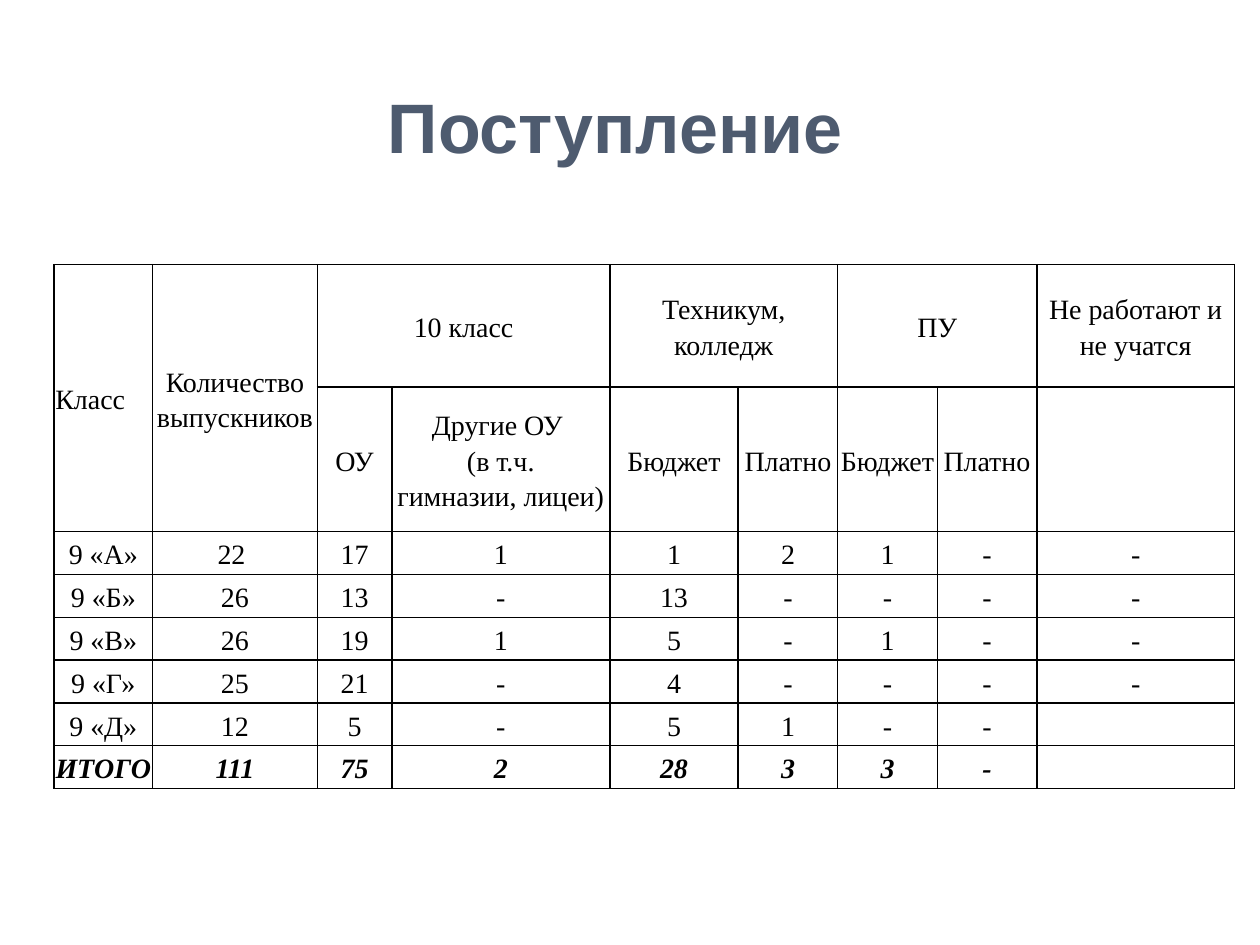
from lxml import etree
from pptx import Presentation
from pptx.dml.color import RGBColor
from pptx.enum.text import MSO_ANCHOR, PP_ALIGN
from pptx.oxml import parse_xml
from pptx.oxml.ns import nsdecls
from pptx.util import Inches, Pt

TITLE = "Поступление "
COLS = [0.78, 1.31, 0.59, 1.73, 1.02, 0.79, 0.79, 0.79, 1.57]
ROWS = [0.97, 1.15] + [0.34] * 6
CELLS = [
    ["Класс", "Количество\nвыпускников", "10 класс", "", "Техникум, колледж", "",
     "ПУ", "", "Не работают и не учатся"],
    ["", "", "ОУ", "Другие ОУ \n(в т.ч.\nгимназии, лицеи)", "Бюджет", "Платно",
     "Бюджет", "Платно", ""],
    ["9 «А»", "22 ", "17", "1", "1", "2", "1", "-", "-"],
    ["9 «Б»", "26", "13", "-", "13", "-", "-", "-", "-"],
    ["9 «В»", "26", "19", "1", "5", "-", "1", "-", "-"],
    ["9 «Г»", "25", "21", "-", "4", "-", "-", "-", "-"],
    ["9 «Д»", "12", "5", "-", "5", "1", "-", "-", ""],
    ["ИТОГО", "111", "75", "2", "28", "3", "3", "-", ""],
]
MERGES = [(0, 0, 1, 0), (0, 1, 1, 1), (0, 2, 0, 3), (0, 4, 0, 5), (0, 6, 0, 7)]


def color(value):
    return RGBColor.from_string(value)


def style_font(p, name, size, value, bold, italic=False):
    f = p.font
    f.name, f.size, f.bold, f.italic = name, Pt(size), bold, italic
    f.color.rgb = color(value)


def add_borders(cell, value="000000", width=1):
    tcPr = cell._tc.get_or_add_tcPr()
    for side in ("lnL", "lnR", "lnT", "lnB"):
        ln = parse_xml(f'<a:{side} {nsdecls("a")} w="{Pt(width)}"/>')
        fill = etree.SubElement(ln, ln.tag.replace(side, "solidFill"))
        etree.SubElement(fill, ln.tag.replace(side, "srgbClr"), val=value)
        tcPr.append(ln)


def fill_cell(cell, text, row, col):
    add_borders(cell)
    cell.fill.solid()
    cell.fill.fore_color.rgb = color("FFFFFF")
    cell.vertical_anchor = MSO_ANCHOR.MIDDLE
    cell.margin_left = cell.margin_right = Inches(0.01)
    cell.margin_top = cell.margin_bottom = Inches(0.01)
    cell.text = text
    total = row == len(CELLS) - 1
    for p in cell.text_frame.paragraphs:
        p.alignment = PP_ALIGN.LEFT if row == col == 0 else PP_ALIGN.CENTER
        p.line_spacing = 1.15
        if col == 0 or (row < 2 and col > 3):
            p.space_after = Pt(10)
        style_font(p, "Times New Roman", 16, "000000", total, total)


def add_title(s):
    sp = s.shapes.title
    sp.left, sp.top, sp.width, sp.height = map(Inches, (0.43, 0.52, 9.06, 0.96))
    tf = sp.text_frame
    tf.text = TITLE
    tf.vertical_anchor = MSO_ANCHOR.MIDDLE
    p = tf.paragraphs[0]
    p.alignment = PP_ALIGN.CENTER
    style_font(p, "Arial", 40, "4E5B6F", True)


def add_admissions(s):
    table = s.shapes.add_table(
        len(ROWS), len(COLS), Inches(0.43), Inches(2.1),
        Inches(sum(COLS)), Inches(sum(ROWS))).table
    table.first_row = table.horz_banding = False
    for column, width in zip(table.columns, COLS):
        column.width = Inches(width)
    for row, height in zip(table.rows, ROWS):
        row.height = Inches(height)
    for r, texts in enumerate(CELLS):
        for c, text in enumerate(texts):
            fill_cell(table.cell(r, c), text, r, c)
    for top, left, bottom, right in MERGES:
        table.cell(top, left).merge(table.cell(bottom, right))


def main():
    prs = Presentation()
    prs.slide_width, prs.slide_height = Inches(10), Inches(7.5)
    s = prs.slides.add_slide(prs.slide_layouts[5])
    add_title(s)
    add_admissions(s)
    prs.save("out.pptx")


if __name__ == "__main__":
    main()
